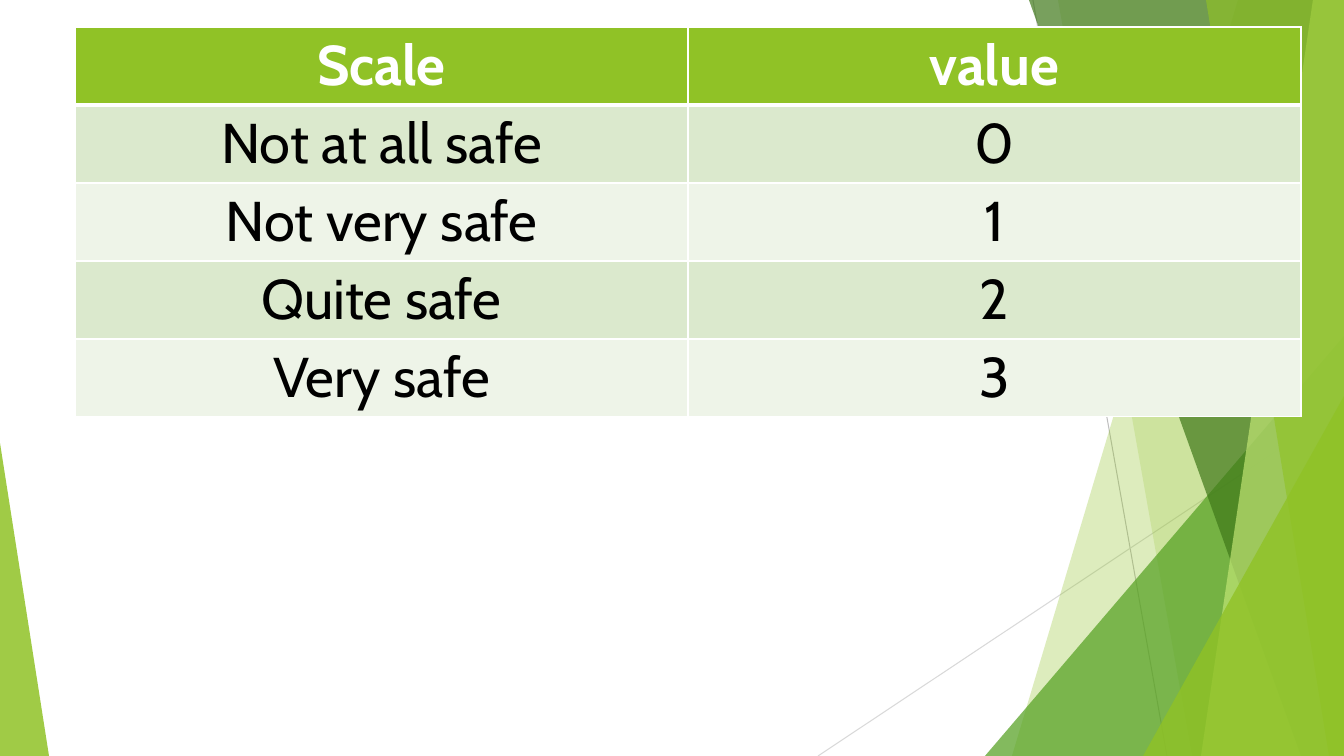
from lxml import etree
from pptx import Presentation
from pptx.dml.color import RGBColor
from pptx.enum.shapes import MSO_CONNECTOR, MSO_SHAPE
from pptx.enum.text import PP_ALIGN
from pptx.oxml.ns import qn
from pptx.util import Pt

STRAIGHT = MSO_CONNECTOR.STRAIGHT
TRIANGLE = MSO_SHAPE.ISOSCELES_TRIANGLE
CENTER = PP_ALIGN.CENTER
WIDTH, HEIGHT = 1344, 756
EMU_PER_PX = 12192000 / WIDTH
GREEN = "90C226"


def px(*lengths):
    return [round(length * EMU_PER_PX) for length in lengths]


def paint(fill, color, opacity=100):
    """Make a fill solid, with its opacity in percent."""
    fill.solid()
    fill.fore_color.rgb = RGBColor.from_string(color)
    if opacity < 100:
        tint = fill._xPr.find(qn("a:solidFill"))[0]
        etree.SubElement(tint, qn("a:alpha"), val=str(opacity * 1000))


deck = Presentation()
deck.slide_width, deck.slide_height = px(WIDTH, HEIGHT)
page = deck.slides.add_slide(deck.slide_layouts[6])
shapes = page.shapes

# Thin lines behind the facets
for ends, color in [((1033, 0, 1167, 756), "BFBFBF"), ((1344, 406, 818, 756), "D9D9D9")]:
    ray = shapes.add_connector(STRAIGHT, *px(*ends))
    paint(ray.line.fill, color)
    ray.line.width = Pt(0.75)
    etree.SubElement(ray._element.spPr, qn("a:effectLst"))

# Bands run from a top x to a bottom x and fill out to the right edge;
# triangles give left, top, width and the side their apex is on (0 left, 1 right).
facets = [
    ("band", (1238, 1012), GREEN, 30),
    ("band", (1058, 1192), GREEN, 20),
    ("triangle", (985, 336, 359, 1), "54A021", 72),
    ("band", (1029, 1301), "3F7819", 70),
    ("band", (1313, 1201), "C0E474", 70),
    ("band", (1206, 1329), GREEN, 65),
    ("triangle", (1143, 396, 201, 1), GREEN, 80),
    ("triangle", (0, 443, 49, 0), GREEN, 85),
]
for kind, geometry, color, opacity in facets:
    if kind == "band":
        top_x, bottom_x = geometry
        outline = shapes.build_freeform(top_x, 0, scale=EMU_PER_PX)
        outline.add_line_segments([(WIDTH, 0), (WIDTH, HEIGHT), (bottom_x, HEIGHT)])
        facet = outline.convert_to_shape()
    else:
        left, top, width, apex = geometry
        facet = shapes.add_shape(TRIANGLE, *px(left, top, width, HEIGHT - top))
        facet.adjustments[0] = apex
    paint(facet.fill, color, opacity)
    facet.line.fill.background()
    facet.shadow.inherit = False

# Scale table
rows = [
    ("Scale", "value"),
    ("Not at all safe", "0"),
    ("Not very safe", "1"),
    ("Quite safe", "2"),
    ("Very safe", "3"),
]
table = shapes.add_table(len(rows), 2, *px(75, 27, 1226, 385)).table
for row_index, texts in enumerate(rows):
    header = row_index == 0
    fill_color = GREEN if header else ("EEF4E8", "DBE9CD")[row_index % 2]
    for column_index, text in enumerate(texts):
        cell = table.cell(row_index, column_index)
        para = cell.text_frame.paragraphs[0]
        para.alignment = CENTER
        span = para.add_run()
        span.text = text
        for name, value in {"name": "Cabin", "size": Pt(40), "bold": header}.items():
            setattr(span.font, name, value)
        paint(span.font.fill, "FFFFFF" if header else "000000")
        properties = cell._tc.get_or_add_tcPr()
        for side in "LRTB":
            thick = (header and side == "B") or (row_index == 1 and side == "T")
            border = etree.SubElement(
                properties, qn(f"a:ln{side}"), w=str(Pt(3 if thick else 1)))
            solid = etree.SubElement(border, qn("a:solidFill"))
            etree.SubElement(solid, qn("a:srgbClr"), val="FFFFFF")
        paint(cell.fill, fill_color)

deck.save("out.pptx")
